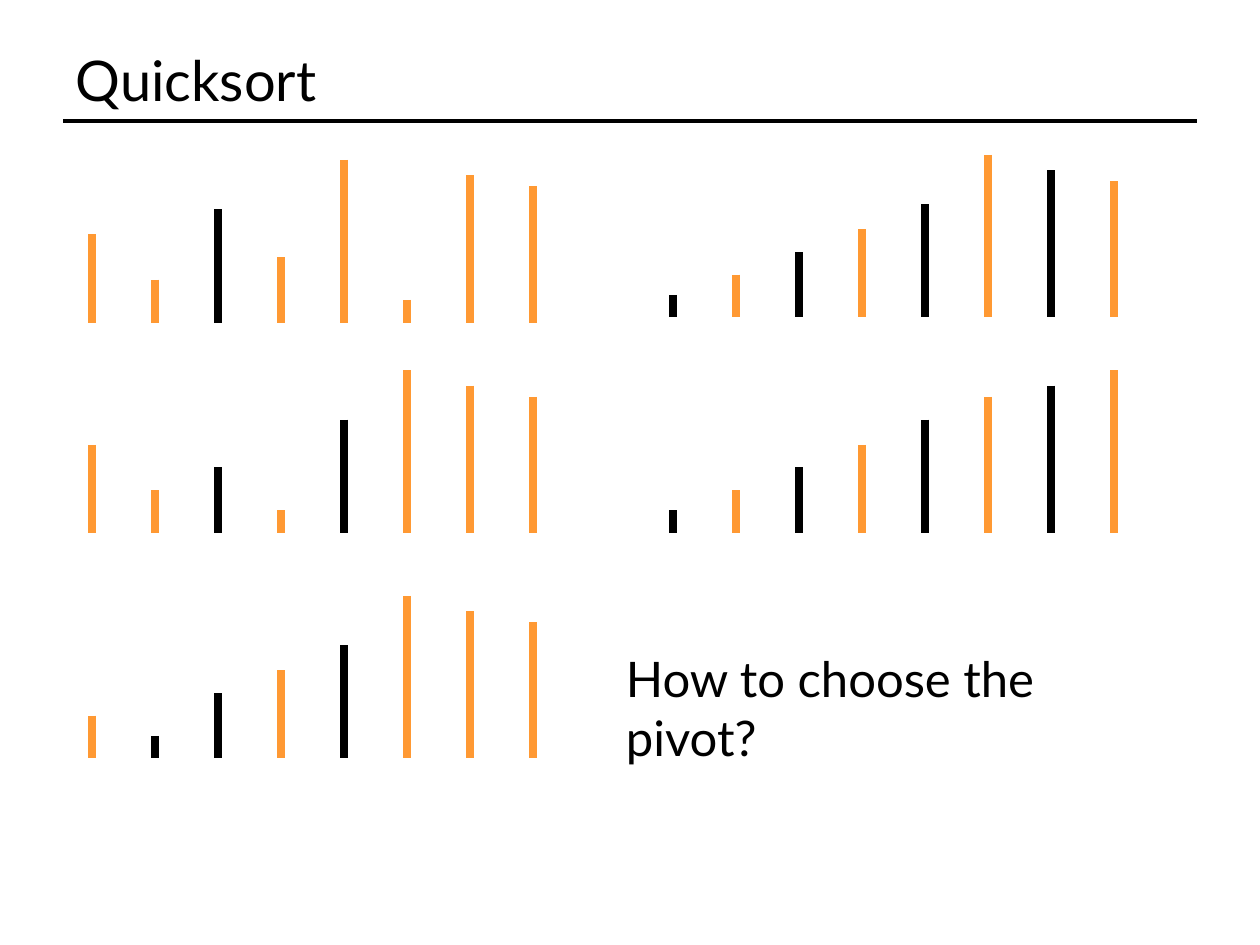
from lxml import etree
from pptx import Presentation
from pptx.dml.color import RGBColor
from pptx.enum.shapes import MSO_CONNECTOR
from pptx.enum.text import MSO_ANCHOR, PP_ALIGN
from pptx.oxml.ns import qn
from pptx.util import Inches, Pt

STRAIGHT = MSO_CONNECTOR.STRAIGHT
MIDDLE, TOP = MSO_ANCHOR.MIDDLE, MSO_ANCHOR.TOP
LEFT = PP_ALIGN.LEFT
BLACK, ORANGE = "000000", "FF9933"

deck = Presentation()
deck.slide_width, deck.slide_height = Inches(10), Inches(7.5)
slide = deck.slides.add_slide(deck.slide_layouts[5])
column = deck.slide_width / 20


def write(holder, text, size, anchor=TOP, color=BLACK, font="Lato"):
    frame = holder.text_frame
    frame.word_wrap = True
    frame.vertical_anchor = anchor
    paragraph = frame.paragraphs[0]
    paragraph.alignment = LEFT
    run = paragraph.add_run()
    run.text = text
    run.font.size = Pt(size)
    run.font.name = font
    run.font.color.rgb = RGBColor.from_string(color)


def draw_line(x1, y1, x2, y2, color, width):
    line = slide.shapes.add_connector(STRAIGHT, int(x1), int(y1), int(x2), int(y2))
    line.line.color.rgb = RGBColor.from_string(color)
    line.line.width = Pt(width)
    etree.SubElement(line._element.spPr, qn("a:effectLst"))


rule_y = Inches(0.96)
draw_line(column, rule_y, 19 * column, rule_y, BLACK, 2)

heading = slide.shapes.title
heading.left, heading.top = int(column), Inches(0.3)
heading.width, heading.height = int(18 * column), Inches(0.66)
write(heading, "Quicksort", 32, anchor=MIDDLE)

bar_heights = {1: 0.18, 2: 0.34, 3: 0.52, 4: 0.7, 5: 0.9, 6: 1.08, 7: 1.17, 8: 1.29}
left_start, right_start = 0.73, 5.34
sorting_steps = [
    (left_start, 2.56, [4, 2, 5, 3, 8, 1, 7, 6], {5}),
    (left_start, 4.23, [4, 2, 3, 1, 5, 8, 7, 6], {3, 5}),
    (left_start, 6.02, [2, 1, 3, 4, 5, 8, 7, 6], {1, 3, 5}),
    (right_start, 2.52, [1, 2, 3, 4, 5, 8, 7, 6], {1, 3, 5, 7}),
    (right_start, 4.23, [1, 2, 3, 4, 5, 6, 7, 8], {1, 3, 5, 7}),
]
for start, baseline, ranks, pivots in sorting_steps:
    for position, rank in enumerate(ranks):
        x = Inches(start) + position * column
        bar_top = Inches(baseline - bar_heights[rank])
        bar_color = BLACK if rank in pivots else ORANGE
        draw_line(x, bar_top, x, Inches(baseline), bar_color, 4.5)

question = slide.shapes.add_textbox(Inches(4.87), Inches(5.1), Inches(4.4), Inches(0.57))
write(question, "How to choose the pivot?", 28)

deck.save("out.pptx")
